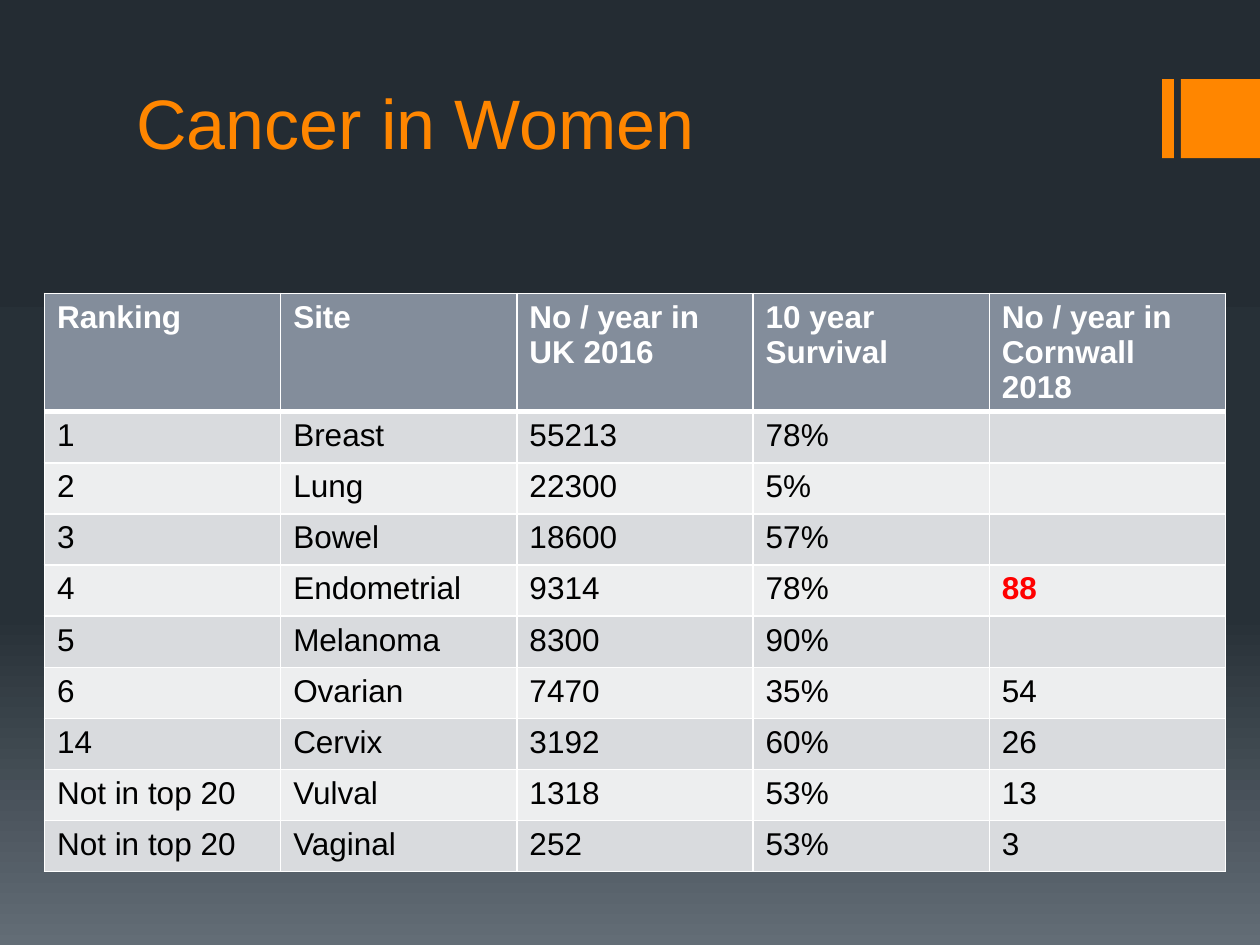
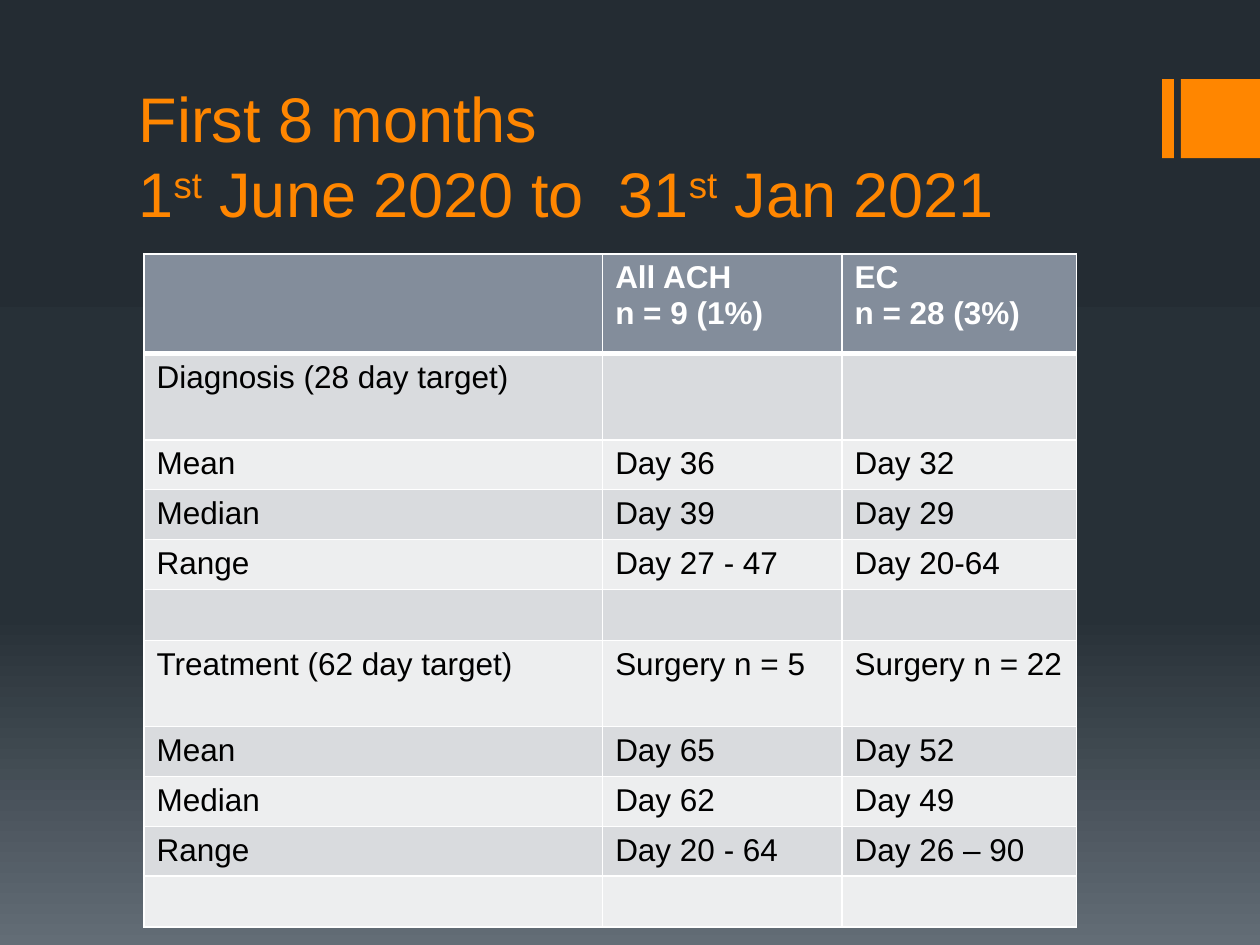
from copy import deepcopy
from dataclasses import dataclass

from lxml.etree import SubElement
from pptx import Presentation
from pptx.dml.color import RGBColor
from pptx.enum.shapes import MSO_SHAPE
from pptx.enum.text import MSO_ANCHOR, MSO_AUTO_SIZE, PP_ALIGN
from pptx.oxml.ns import qn
from pptx.util import Pt

COLOURS = {
    "accent": "FF8600",
    "header": "838D9B",
    "odd_row": "D9DBDE",
    "even_row": "EDEEEF",
    "border": "FFFFFF",
    "header_text": "FFFFFF",
    "body_text": "000000",
    "highlight": "FF0000",
}
BACKGROUND_STOPS = [(0, "242C33"), (0.65, "273037"), (1, "636D76")]
FONT = "Arial"
TABLE_TEXT_SIZE = 18
TITLE_WIDTH, TITLE_HEIGHT = 576, 90.7
BAR_TOP, BAR_HEIGHT = 45.2, 45.2
BARS = [(664.1, 6.8), (674.8, 45.2)]  # left, width


@dataclass
class TitleStyle:
    left: float
    top: float
    size: float
    anchor: MSO_ANCHOR
    margin_top: float = 3.6


@dataclass
class TableLayout:
    left: float
    top: float
    column_widths: list[float]
    row_heights: list[float]


CANCER_ROWS = [
    ["Ranking", "Site", "No / year in UK 2016", "10 year Survival", "No / year in Cornwall 2018"],
    ["1", "Breast", "55213", "78%", ""],
    ["2", "Lung", "22300", "5%", ""],
    ["3", "Bowel", "18600", "57%", ""],
    ["4", "Endometrial", "9314", "78%", "88"],
    ["5", "Melanoma", "8300", "90%", ""],
    ["6", "Ovarian", "7470", "35%", "54"],
    ["14", "Cervix", "3192", "60%", "26"],
    ["Not in top 20", "Vulval", "1318", "53%", "13"],
    ["Not in top 20", "Vaginal", "252", "53%", "3"],
]
WAITING_ROWS = [
    ["", "All ACH\nn = 9 (1%)", "EC\nn = 28 (3%)"],
    ["Diagnosis (28 day target)", "", ""],
    ["Mean", "Day 36", "Day 32"],
    ["Median", "Day 39", "Day 29"],
    ["Range", "Day 27 - 47", "Day 20-64"],
    ["", "", ""],
    ["Treatment (62 day target)", "Surgery n = 5", "Surgery n = 22"],
    ["Mean", "Day 65", "Day 52"],
    ["Median", "Day 62", "Day 49"],
    ["Range", "Day 20 - 64", "Day 26 – 90"],
    ["", "", ""],
]


def colour(name: str) -> RGBColor:
    return RGBColor.from_string(COLOURS[name])


def set_background(master) -> None:
    fill = master.background.fill
    fill.gradient()
    fill.gradient_angle = 270
    stop_list = master.element.find(".//" + qn("a:gsLst"))
    stop_list.append(deepcopy(stop_list[-1]))
    for stop, (position, hex_colour) in zip(fill.gradient_stops, BACKGROUND_STOPS):
        stop.position = position
        stop.color.rgb = RGBColor.from_string(hex_colour)


def add_page(deck, title_parts: list[str], style: TitleStyle):
    """Add a slide with accent bars; every second title part is superscript."""
    page = deck.slides.add_slide(deck.slide_layouts.get_by_name("Title Only"))
    for left, width in BARS:
        bar = page.shapes.add_shape(
            MSO_SHAPE.RECTANGLE, Pt(left), Pt(BAR_TOP), Pt(width), Pt(BAR_HEIGHT)
        )
        bar.shadow.inherit = False
        bar.fill.solid()
        bar.fill.fore_color.rgb = colour("accent")
        bar.line.fill.background()

    title = page.shapes.title
    title.left, title.top = Pt(style.left), Pt(style.top)
    title.width, title.height = Pt(TITLE_WIDTH), Pt(TITLE_HEIGHT)
    frame = title.text_frame
    frame.auto_size = MSO_AUTO_SIZE.NONE
    frame.word_wrap = True
    frame.vertical_anchor = style.anchor
    frame.margin_top = Pt(style.margin_top)
    para = frame.paragraphs[0]
    para.alignment = PP_ALIGN.LEFT
    para.text = title_parts[0]
    for part in title_parts[1:]:
        para.add_run().text = part
    for span in para.runs:
        span.font.name = FONT
        span.font.size = Pt(style.size)
        span.font.color.rgb = colour("accent")
        if span.text == "st":
            span.font._element.set("baseline", "30000")
    return page


def set_borders(cell, top: float, bottom: float) -> None:
    properties = cell._tc.get_or_add_tcPr()
    widths = {"a:lnL": 1, "a:lnR": 1, "a:lnT": top, "a:lnB": bottom}
    for position, (tag, width) in enumerate(widths.items()):
        line = SubElement(properties, qn(tag), w=str(Pt(width)))
        fill = SubElement(line, qn("a:solidFill"))
        SubElement(fill, qn("a:srgbClr"), val=COLOURS["border"])
        properties.insert(position, line)


def format_text(cell, colour_name: str, bold: bool) -> None:
    for para in cell.text_frame.paragraphs:
        para.font.size = Pt(TABLE_TEXT_SIZE)
        for span in para.runs:
            span.font.name = FONT
            span.font.size = Pt(TABLE_TEXT_SIZE)
            span.font.bold = bold
            span.font.color.rgb = colour(colour_name)


def add_data_table(page, layout: TableLayout, rows: list[list[str]]):
    """Add a table with a grey header and alternating row fills."""
    table = page.shapes.add_table(
        len(rows), len(rows[0]), Pt(layout.left), Pt(layout.top),
        Pt(sum(layout.column_widths)), Pt(sum(layout.row_heights)),
    ).table
    table.horz_banding = False
    for column, width in zip(table.columns, layout.column_widths):
        column.width = Pt(width)
    for row_number, (row, values) in enumerate(zip(table.rows, rows)):
        row.height = Pt(layout.row_heights[row_number])
        is_header = row_number == 0
        band = "header" if is_header else "odd_row" if row_number % 2 else "even_row"
        for cell, value in zip(row.cells, values):
            cell.text_frame.text = value
            format_text(cell, "header_text" if is_header else "body_text", is_header)
            cell.fill.solid()
            cell.fill.fore_color.rgb = colour(band)
            set_borders(cell, 3 if row_number == 1 else 1, 3 if is_header else 1)
    return table


def add_cancer_page(deck) -> None:
    style = TitleStyle(70.6, 37.4, 40, MSO_ANCHOR.TOP, margin_top=8)
    page = add_page(deck, ["Cancer in Women"], style)
    layout = TableLayout(25.4, 167.6, [135] * 5, [29.2] * len(CANCER_ROWS))
    table = add_data_table(page, layout, CANCER_ROWS)
    format_text(table.cell(4, 4), "highlight", True)


def add_waiting_page(deck) -> None:
    title_parts = ["First 8 months\v1", "st", " June 2020 to  31", "st", " Jan 2021"]
    page = add_page(deck, title_parts, TitleStyle(72, 44.6, 36, MSO_ANCHOR.BOTTOM))
    target, measure = 49.2, 28.5
    section = [target] + [measure] * 4
    layout = TableLayout(82.3, 145.2, [262.1, 136.8, 133.9], [57] + section * 2)
    add_data_table(page, layout, WAITING_ROWS)


def main() -> None:
    deck = Presentation()
    deck.slide_width, deck.slide_height = Pt(720), Pt(540)
    set_background(deck.slide_master)
    add_cancer_page(deck)
    add_waiting_page(deck)
    deck.save("out.pptx")


if __name__ == "__main__":
    main()
